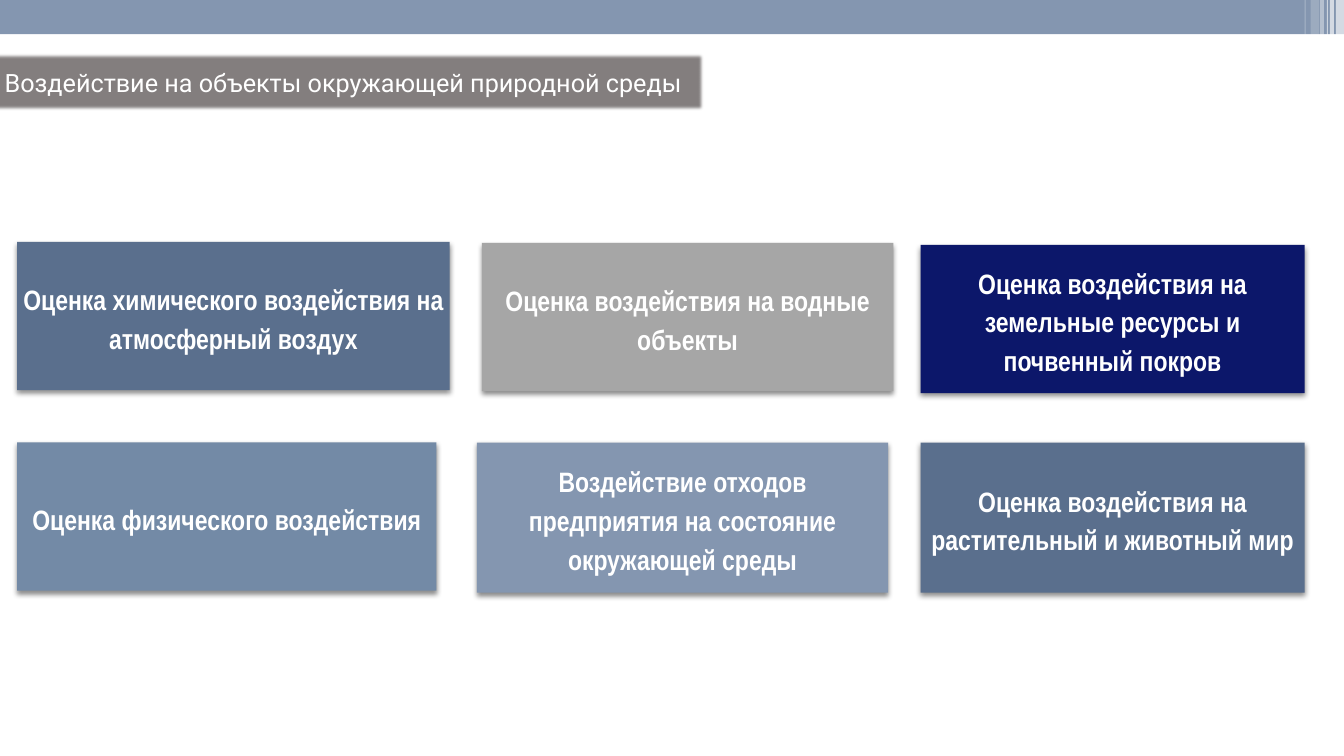
from lxml.etree import SubElement
from pptx import Presentation
from pptx.dml.color import RGBColor
from pptx.enum.shapes import MSO_SHAPE
from pptx.enum.text import MSO_ANCHOR, PP_ALIGN
from pptx.oxml.ns import qn
from pptx.util import Inches, Pt

COLORS = {
    "white": "FFFFFF",
    "black": "000000",
    "band": "8496B0",
    "title": "767171",
    "slate": "5A6F8D",
    "gray": "A6A6A6",
    "navy": "0C176A",
    "steel": "738AA6",
}

STRIPES = [
    (13.25, 0.08, 0.68, 65),
    (13.19, 0.04, 0.68, 65),
    (13.16, 0.01, 0.68, 60),
    (13.09, 0.04, 0.68, 40),
    (13, 0.08, 0.64, 20),
    (12.94, 0.01, 0.64, 30),
]

CARDS = [
    (0.17, 2.4, 4.29, 1.47, "slate", "Оценка химического воздействия на атмосферный воздух"),
    (4.78, 2.41, 4.08, 1.47, "gray", "Оценка воздействия на водные объекты"),
    (9.13, 2.43, 3.81, 1.47, "navy", "Оценка воздействия на земельные ресурсы и почвенный покров"),
    (0.17, 4.39, 4.16, 1.47, "steel", "Оценка физического воздействия"),
    (4.73, 4.39, 4.08, 1.49, "band", "Воздействие отходов предприятия на состояние окружающей среды"),
    (9.13, 4.39, 3.81, 1.49, "slate", "Оценка воздействия на растительный и животный мир"),
]


class ImpactPage:
    """Draws the elements of the environmental impact slide."""

    def __init__(self, page):
        self.page = page
        self.title_font = "Roboto"
        self.card_font = "Arial Narrow"

    def block(self, left, top, width, height, color, opacity=100):
        box = self.page.shapes.add_shape(
            MSO_SHAPE.RECTANGLE, Inches(left), Inches(top), Inches(width), Inches(height)
        )
        box.shadow.inherit = False
        box.fill.solid()
        box.fill.fore_color.rgb = RGBColor.from_string(COLORS[color])
        box.line.fill.background()
        if opacity < 100:
            tint = box._element.spPr.find(qn("a:solidFill")).find(qn("a:srgbClr"))
            SubElement(tint, qn("a:alpha"), val=str(opacity * 1000))
        return box

    def effects(self, box):
        return box._element.spPr.find(qn("a:effectLst"))

    def label(self, box, text, font, size, bold=False, spacing=1.0):
        frame = box.text_frame
        frame.word_wrap = True
        frame.vertical_anchor = MSO_ANCHOR.MIDDLE
        para = frame.paragraphs[0]
        para.alignment = PP_ALIGN.CENTER
        para.line_spacing = spacing
        span = para.add_run()
        span.text = text
        span.font.name = font
        span.font.size = Pt(size)
        span.font.bold = bold
        span.font.color.rgb = RGBColor.from_string(COLORS["white"])

    def title(self, text):
        box = self.block(-0.18, 0.52, 7.17, 0.59, "title", 90)
        SubElement(self.effects(box), qn("a:softEdge"), rad=str(Pt(2.5)))
        self.label(box, text, self.title_font, 18)

    def card(self, left, top, width, height, color, text):
        box = self.block(left, top, width, height, color)
        shadow = SubElement(
            self.effects(box), qn("a:outerShdw"),
            blurRad=str(Pt(4)), dist=str(Pt(2)), dir="5400000", rotWithShape="0",
        )
        shade = SubElement(shadow, qn("a:srgbClr"), val=COLORS["black"])
        SubElement(shade, qn("a:alpha"), val="45000")
        frame = box.text_frame
        frame.margin_left = frame.margin_right = Inches(0.04)
        frame.margin_top = frame.margin_bottom = Inches(0.04)
        self.label(box, text, self.card_font, 20, bold=True, spacing=1.15)


def main():
    deck = Presentation()
    deck.slide_width = Inches(13.33)
    deck.slide_height = Inches(7.5)
    impact = ImpactPage(deck.slides.add_slide(deck.slide_layouts[6]))
    impact.block(0, 0, 13.33, 0.34, "band")
    for left, width, height, opacity in STRIPES:
        impact.block(left, 0, width, height, "white", opacity)
    impact.title("Воздействие на объекты окружающей природной среды")
    for card in CARDS:
        impact.card(*card)
    deck.save("out.pptx")


if __name__ == "__main__":
    main()
